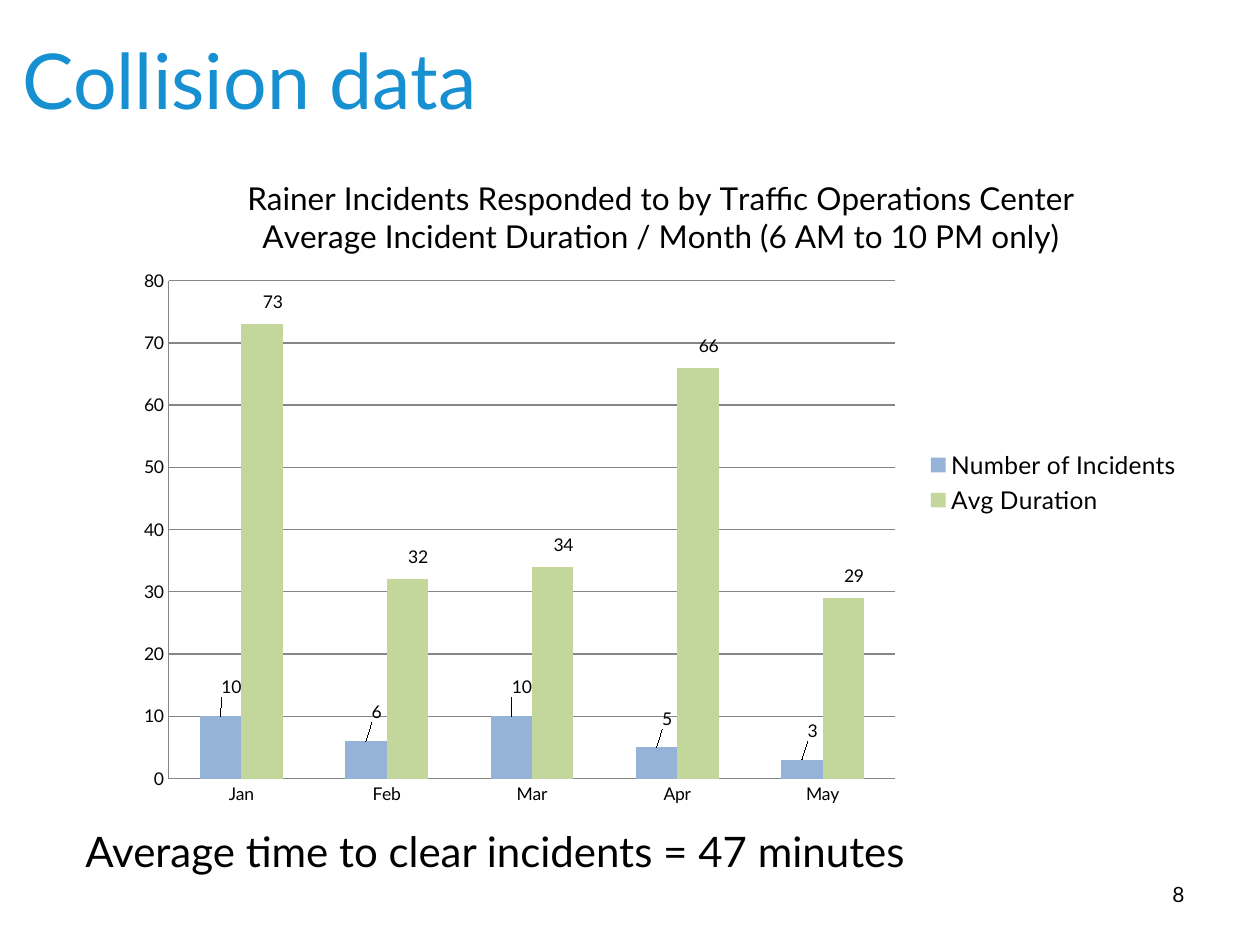
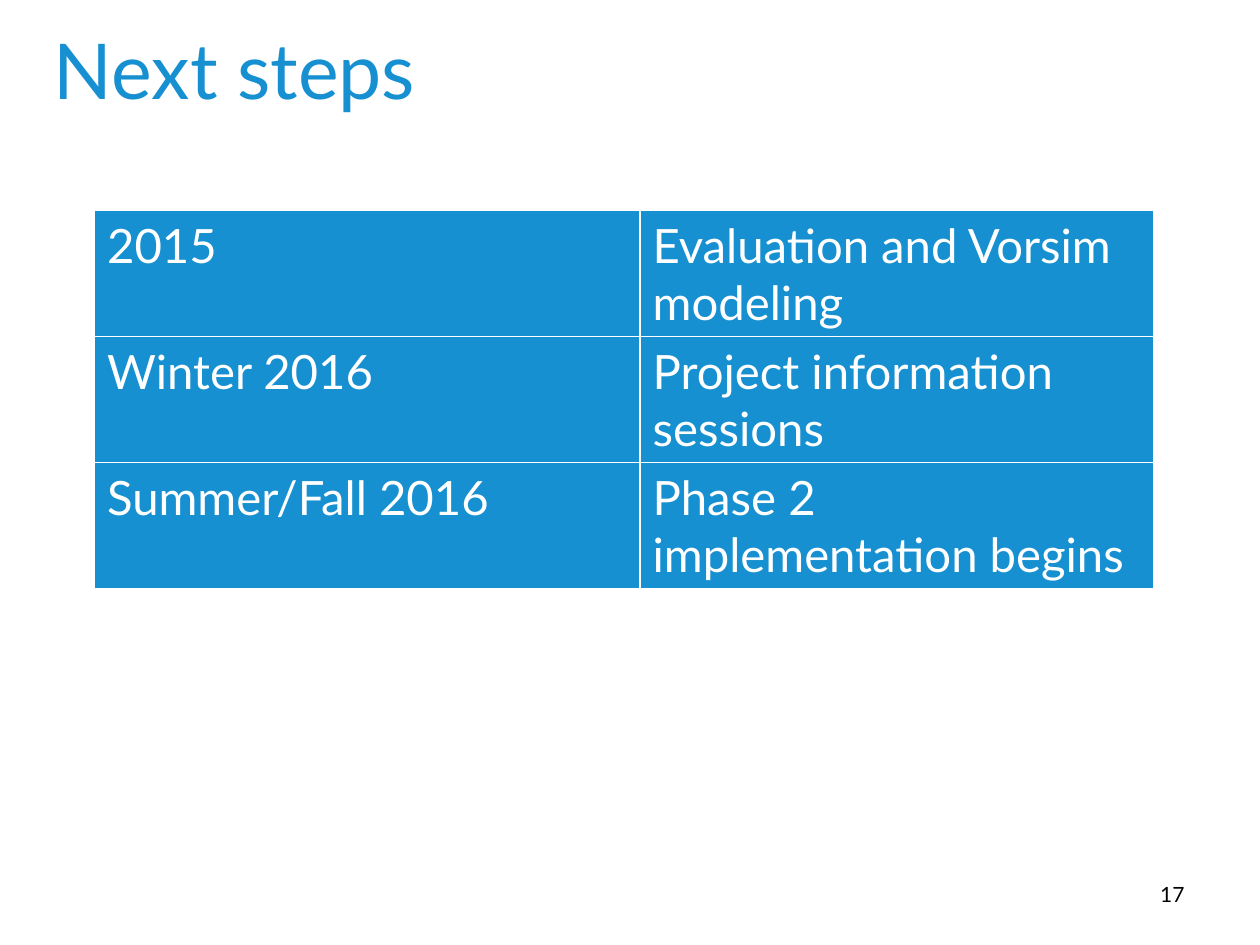
"""Build two slides: a collision data chart and a table of next steps."""
import lxml.etree
import pptx
import pptx.chart.data
import pptx.dml.color
import pptx.enum.chart
import pptx.enum.text
import pptx.oxml.ns
import pptx.util

Inches = pptx.util.Inches
Pt = pptx.util.Pt
qn = pptx.oxml.ns.qn

FONT = "Lato"
BLUE, BLACK, WHITE, GRID_GRAY = "1690D0", "000000", "FFFFFF", "868686"
TITLE_STYLE = {"size": Pt(44), "color": BLUE}
PAGE_STYLE = {"size": Pt(12), "color": BLACK}
CAPTION_STYLE = {"size": Pt(24), "color": BLACK}
CELL_STYLE = {"size": Pt(27), "color": WHITE}
CHART_TITLE_STYLE = {"size": Pt(18), "color": BLACK, "bold": False}
CHART_STYLE = {"size": Pt(10), "color": BLACK}
LEGEND_STYLE = {"size": Pt(14), "color": BLACK}

TITLE_SIZE = (9, 1.25)
PAGE_BOX = (7.17, 6.95, 2.33, 0.4)

COLLISIONS = {
    "title": "Collision data",
    "title_at": (0.08, 0),
    "page": "8",
    "chart_box": (1, 1.16, 8.48, 5.34),
    "chart_title": [
        "Rainer Incidents Responded to by Traffic Operations Center",
        "Average Incident Duration / Month (6 AM to 10 PM only)",
    ],
    "months": ["Jan", "Feb", "Mar", "Apr", "May"],
    "series": [
        {"name": "Number of Incidents", "values": [10, 6, 10, 5, 3],
         "color": "95B3D7", "label_shift": {"x": 0.01, "y": -0.02}},
        {"name": "Avg Duration", "values": [73, 32, 34, 66, 29],
         "color": "C3D69B", "label_shift": {"x": 0.01, "y": -0.01}},
    ],
    "caption": "Average time to clear incidents = 47 minutes",
    "caption_box": (0.58, 6.5, 9, 2),
}

NEXT_STEPS = {
    "title": "Next steps",
    "title_at": (0.33, -0.08),
    "page": "17",
    "table_at": (0.75, 1.67),
    "column_widths": [4.33, 4.08],
    "row_height": 1,
    "rows": [
        ("2015", "Evaluation and Vorsim modeling"),
        ("Winter 2016", "Project information sessions"),
        ("Summer/Fall 2016", "Phase 2\nimplementation begins"),
    ],
}


def rgb(color):
    return pptx.dml.color.RGBColor.from_string(color)


def inches(values):
    return [Inches(value) for value in values]


def fill(part, color):
    part.fill.solid()
    part.fill.fore_color.rgb = rgb(color)


def set_font(font, style):
    for name, value in {"name": FONT, **style}.items():
        if name == "color":
            font.color.rgb = rgb(value)
        else:
            setattr(font, name, value)


def write(text_frame, text, style, align=None):
    text_frame.text = text
    for paragraph in text_frame.paragraphs:
        paragraph.alignment = align
        for run in paragraph.runs:
            set_font(run.font, style)


def add_text(slide, box, text, style, align=None, anchor=None):
    text_frame = slide.shapes.add_textbox(*inches(box)).text_frame
    text_frame.word_wrap = True
    text_frame.vertical_anchor = anchor
    write(text_frame, text, style, align)


def add_slide(presentation, content):
    slide = presentation.slides.add_slide(presentation.slide_layouts[6])
    add_text(slide, content["title_at"] + TITLE_SIZE, content["title"], TITLE_STYLE,
             anchor=pptx.enum.text.MSO_ANCHOR.MIDDLE)
    add_text(slide, PAGE_BOX, content["page"], PAGE_STYLE, pptx.enum.text.PP_ALIGN.RIGHT)
    return slide


def place(parent, index, values, modes):
    for layout in parent.findall(qn("c:layout")):
        parent.remove(layout)
    layout = lxml.etree.Element(qn("c:layout"))
    manual = lxml.etree.SubElement(layout, qn("c:manualLayout"))
    for name, value in {**modes, **values}.items():
        lxml.etree.SubElement(manual, qn(f"c:{name}")).set("val", str(value))
    parent.insert(index, layout)


def style_axes(chart):
    chart.value_axis.maximum_scale = 80
    chart.value_axis.minimum_scale = 0
    chart.value_axis.major_unit = 10
    chart.value_axis.has_major_gridlines = True
    for axis in (chart.category_axis, chart.value_axis):
        axis.major_tick_mark = pptx.enum.chart.XL_TICK_MARK.NONE
        axis.minor_tick_mark = pptx.enum.chart.XL_TICK_MARK.NONE
    for part in (chart.category_axis, chart.value_axis, chart.value_axis.major_gridlines):
        part.format.line.color.rgb = rgb(GRID_GRAY)
        part.format.line.width = Pt(0.75)


def style_series(chart, series_list):
    plot = chart.plots[0]
    plot.gap_width = 150
    plot.vary_by_categories = False
    position = pptx.enum.chart.XL_LABEL_POSITION.OUTSIDE_END
    for series, content in zip(plot.series, series_list):
        fill(series.format, content["color"])
        series.data_labels.show_value = True
        series.data_labels.position = position
        for index in range(len(content["values"])):
            series.points[index].data_label.position = position
    for element, content in zip(chart.element.iter(qn("c:ser")), series_list):
        for label in element.iter(qn("c:dLbl")):
            place(label, 1, content["label_shift"], {})


def add_incident_chart(slide, content):
    data = pptx.chart.data.CategoryChartData()
    data.categories = content["months"]
    for series in content["series"]:
        data.add_series(series["name"], series["values"])
    chart = slide.shapes.add_chart(pptx.enum.chart.XL_CHART_TYPE.COLUMN_CLUSTERED,
                                   *inches(content["chart_box"]), data).chart
    set_font(chart.font, CHART_STYLE)
    chart.has_legend = True
    chart.legend.position = pptx.enum.chart.XL_LEGEND_POSITION.RIGHT
    chart.legend.include_in_layout = False
    set_font(chart.legend.font, LEGEND_STYLE)
    write(chart.chart_title.text_frame, "\n".join(content["chart_title"]), CHART_TITLE_STYLE,
          pptx.enum.text.PP_ALIGN.CENTER)
    style_axes(chart)
    style_series(chart, content["series"])
    edges = {"xMode": "edge", "yMode": "edge"}
    place(next(chart.element.iter(qn("c:title"))), 1, {"x": 0.11, "y": 0.04}, edges)
    place(next(chart.element.iter(qn("c:plotArea"))), 0,
          {"x": 0.04, "y": 0.2, "w": 0.68, "h": 0.74}, {"layoutTarget": "inner", **edges})


def add_borders(cell_properties, color):
    for side in ("lnL", "lnR", "lnT", "lnB"):
        line = lxml.etree.SubElement(cell_properties, qn(f"a:{side}"), w=str(Pt(1)))
        solid = lxml.etree.SubElement(line, qn("a:solidFill"))
        lxml.etree.SubElement(solid, qn("a:srgbClr"), val=color)


def add_steps_table(slide, content):
    rows, widths = content["rows"], content["column_widths"]
    box = (*content["table_at"], sum(widths), len(rows) * content["row_height"])
    frame = slide.shapes.add_table(len(rows), len(widths), *inches(box))
    table = frame.table
    table.first_row = False
    table.horz_banding = False
    for column, width in zip(table.columns, widths):
        column.width = Inches(width)
    for cell_properties in frame.element.iter(qn("a:tcPr")):
        add_borders(cell_properties, WHITE)
    for row, texts in zip(table.rows, rows):
        row.height = Inches(content["row_height"])
        for cell, text in zip(row.cells, texts):
            fill(cell, BLUE)
            write(cell.text_frame, text, CELL_STYLE)


def main():
    presentation = pptx.Presentation()
    presentation.slide_width = Inches(10)
    presentation.slide_height = Inches(7.5)
    slide = add_slide(presentation, COLLISIONS)
    add_incident_chart(slide, COLLISIONS)
    add_text(slide, COLLISIONS["caption_box"], COLLISIONS["caption"], CAPTION_STYLE)
    add_steps_table(add_slide(presentation, NEXT_STEPS), NEXT_STEPS)
    presentation.save("out.pptx")


if __name__ == "__main__":
    main()
